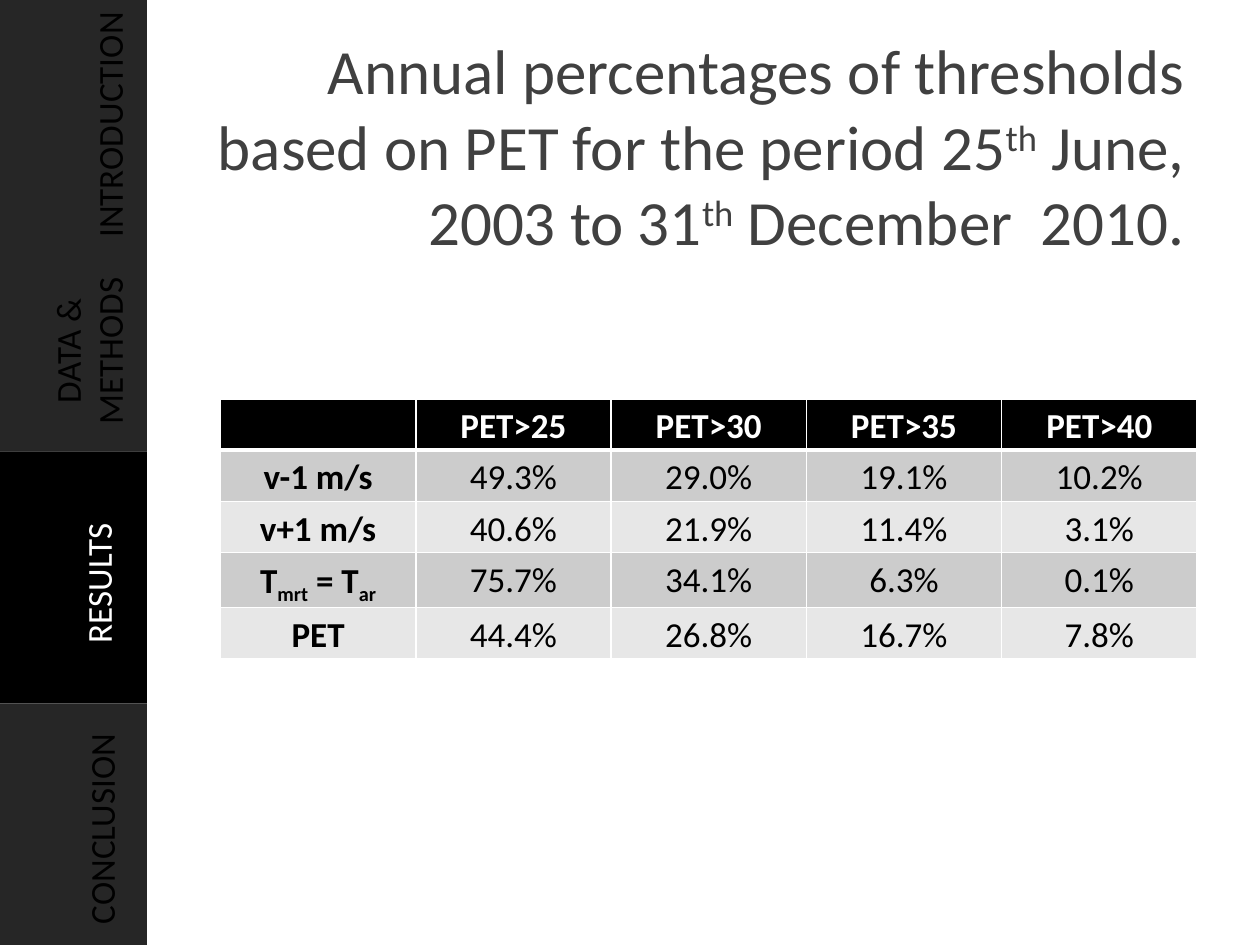
from dataclasses import dataclass

from lxml.etree import SubElement
from pptx import Presentation
from pptx.dml.color import RGBColor
from pptx.enum.shapes import MSO_SHAPE
from pptx.enum.text import MSO_ANCHOR, PP_ALIGN
from pptx.oxml.ns import qn
from pptx.slide import Slide
from pptx.util import Inches, Pt

BLACK = RGBColor(0x00, 0x00, 0x00)
WHITE = RGBColor(0xFF, 0xFF, 0xFF)
CHARCOAL = RGBColor(0x26, 0x26, 0x26)
TITLE_GRAY = RGBColor(0x40, 0x40, 0x40)
BANDS = (RGBColor(0xCC, 0xCC, 0xCC), RGBColor(0xE7, 0xE7, 0xE7))

COLUMNS, ROWS = 120, 90
SIDEBAR = 14
SUPER, SUB = 30, -25

TITLE = (
    ("Annual percentages of thresholds based on PET for the period 25", 0),
    ("th", SUPER),
    (" June, 2003 to 31", 0),
    ("th", SUPER),
    (" December  2010.", 0),
)
TABS = (
    dict(text="INTRODUCTION", top=0, height=24, center=(10.4, 11.9), size=(24.1, 5.25)),
    dict(text="DATA & METHODS", top=24, height=19, center=(8.4, 33.4), size=(19, 9.25)),
    dict(text="RESULTS", top=43, height=24, center=(9.35, 55.55), size=(19, 5.25)),
    dict(text="CONCLUSION", top=67, height=23, center=(9.65, 78.95), size=(22, 5.25)),
)
ACTIVE_TAB = "RESULTS"
THRESHOLDS = (
    ("", "PET>25", "PET>30", "PET>35", "PET>40"),
    ("v-1 m/s", "49.3%", "29.0%", "19.1%", "10.2%"),
    ("v+1 m/s", "40.6%", "21.9%", "11.4%", "3.1%"),
    ((("T", 0), ("mrt", SUB), (" = T", 0), ("ar", SUB)), "75.7%", "34.1%", "6.3%", "0.1%"),
    ("PET", "44.4%", "26.8%", "16.7%", "7.8%"),
)


def write(frame, text, *, font, size, color, bold=False, align=PP_ALIGN.CENTER, spacing=1.0):
    """Write a string, or (text, baseline percent) parts, as one paragraph."""
    paragraph = frame.paragraphs[0]
    paragraph.alignment = align
    paragraph.line_spacing = spacing
    for part, baseline in ((text, 0),) if isinstance(text, str) else text:
        run = paragraph.add_run()
        run.text = part
        run.font.name = font
        run.font.size = Pt(size)
        run.font.bold = bold
        run.font.color.rgb = color
        if baseline:
            run._r.get_or_add_rPr().set("baseline", str(baseline * 1000))


def draw_border(cell, side, points):
    """Draw a white border on one side of a table cell."""
    line = SubElement(cell._tc.get_or_add_tcPr(), qn(f"a:ln{side}"), w=str(Pt(points)))
    SubElement(SubElement(line, qn("a:solidFill")), qn("a:srgbClr"), val=str(WHITE))


@dataclass
class SlideBuilder:
    """Hold the slide, its grid unit and the text style."""

    slide: Slide
    column: float
    row: float
    font: str = "Calibri"
    title_size: int = 36
    body_size: int = 20

    def place(self, left, top, width, height):
        """Turn grid positions into slide lengths."""
        return (
            round(left * self.column), round(top * self.row),
            round(width * self.column), round(height * self.row),
        )

    def panel(self, *box, fill):
        """Add a plain rectangle."""
        shape = self.slide.shapes.add_shape(MSO_SHAPE.RECTANGLE, *self.place(*box))
        shape.shadow.inherit = False
        shape.fill.solid()
        shape.fill.fore_color.rgb = fill
        shape.line.fill.background()

    def text_box(self, *box, text, anchor=MSO_ANCHOR.TOP, rotation=0, **style):
        """Add a wrapping text box."""
        shape = self.slide.shapes.add_textbox(*self.place(*box))
        shape.rotation = rotation
        shape.text_frame.word_wrap = True
        shape.text_frame.vertical_anchor = anchor
        write(shape.text_frame, text, font=self.font, **style)

    def title(self, *box, text):
        """Add the right-aligned heading."""
        self.text_box(*box, text=text, anchor=MSO_ANCHOR.MIDDLE, size=self.title_size,
                      color=TITLE_GRAY, align=PP_ALIGN.RIGHT)

    def tab(self, text, top, height, center, size):
        """Add a sidebar section with its upright label."""
        active = text == ACTIVE_TAB
        self.panel(0, top, SIDEBAR, height, fill=BLACK if active else CHARCOAL)
        corner = (middle - length / 2 for middle, length in zip(center, size))
        self.text_box(*corner, *size, text=text, rotation=270, size=self.body_size,
                      color=WHITE if active else BLACK)

    def table(self, *box, rows):
        """Add a banded table with a header row and bold row labels."""
        frame = self.slide.shapes.add_table(len(rows), len(rows[0]), *self.place(*box))
        for row_index, values in enumerate(rows):
            header = row_index == 0
            for column_index, value in enumerate(values):
                cell = frame.table.cell(row_index, column_index)
                cell.margin_left = cell.margin_right = Inches(0.07)
                cell.margin_top = cell.margin_bottom = 0
                for side in "LRTB":
                    divider = (row_index, side) in ((0, "B"), (1, "T"))
                    draw_border(cell, side, 3 if divider else 1)
                cell.fill.solid()
                cell.fill.fore_color.rgb = BLACK if header else BANDS[(row_index - 1) % 2]
                if value:
                    write(cell.text_frame, value, font=self.font, size=self.body_size,
                          color=WHITE if header else BLACK,
                          bold=header or column_index == 0, spacing=1.15)


def main():
    """Build and save the slide."""
    presentation = Presentation()
    presentation.slide_width = Inches(10)
    presentation.slide_height = Inches(7.5)
    slide = presentation.slides.add_slide(presentation.slide_layouts[6])
    builder = SlideBuilder(slide, presentation.slide_width / COLUMNS,
                           presentation.slide_height / ROWS)
    builder.title(16, 3.6, 98, 20.4, text=TITLE)
    for tab in TABS:
        builder.tab(**tab)
    builder.table(21, 38, 93, 24.4, rows=THRESHOLDS)
    presentation.save("out.pptx")


if __name__ == "__main__":
    main()
